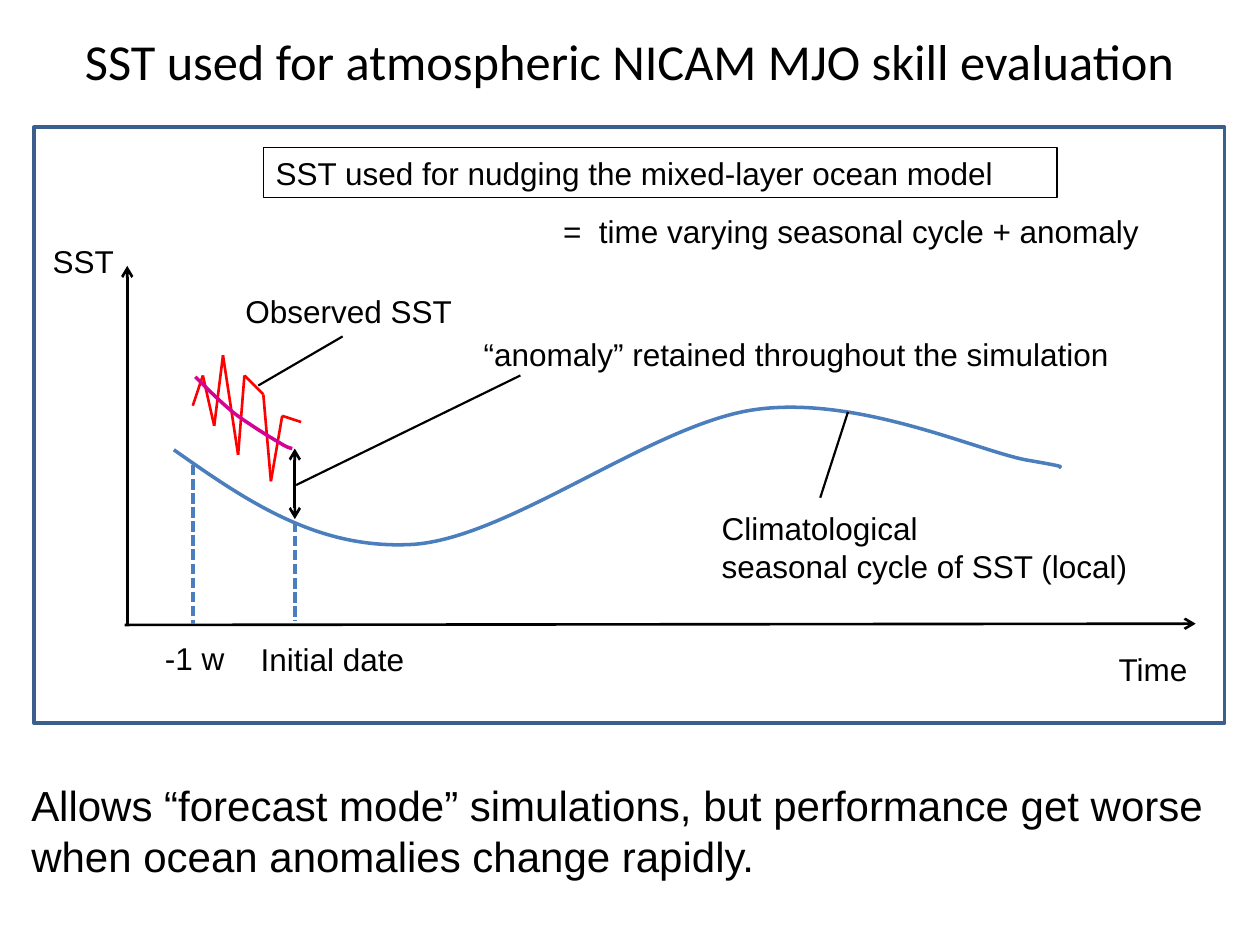
from itertools import pairwise

from lxml import etree
from pptx import Presentation
from pptx.dml.color import RGBColor
from pptx.enum import dml, shapes, text
from pptx.oxml import ns
from pptx.util import Inches, Pt

BLACK = RGBColor(0x00, 0x00, 0x00)
WHITE = RGBColor(0xFF, 0xFF, 0xFF)
FRAME_BLUE = RGBColor(0x3A, 0x5F, 0x8C)
CYCLE_BLUE = RGBColor(0x4B, 0x7E, 0xBC)
OBSERVED_RED = RGBColor(0xFF, 0x00, 0x00)
TREND_MAGENTA = RGBColor(0xD6, 0x00, 0x93)

CYCLE = [(1.11, 2.56), (1.68, 2.96), (2.25, 3.36), (3.02, 3.31),
         (3.79, 3.25), (4.92, 2.35), (5.73, 2.24),
         (6.54, 2.13), (7.47, 2.56), (7.87, 2.64),
         (8.28, 2.71), (8.1, 2.69), (8.15, 2.7)]
TREND = [(1.28, 1.98), (1.38, 2.08), (1.48, 2.18), (1.59, 2.27),
         (1.71, 2.36), (1.89, 2.47), (1.96, 2.51),
         (2.04, 2.56), (2.04, 2.54), (2.05, 2.55)]
OBSERVED = [(1.26, 2.21), (1.34, 1.97), (1.43, 2.37), (1.5, 1.81), (1.62, 2.6),
            (1.67, 1.97), (1.82, 2.12), (1.88, 2.81), (1.97, 2.29), (2.12, 2.34)]
AXES = [((0.74, 3.94), (0.74, 1.1)), ((0.72, 3.95), (9.22, 3.94))]
DATE_MARKS = [((1.26, 2.68), (1.26, 3.94)), ((2.07, 3.13), (2.07, 3.92))]
LEADERS = [((1.78, 2.05), (2.45, 1.66)), ((6.24, 2.94), (6.46, 2.26)),
           ((2.08, 2.84), (3.86, 1.97))]
LABELS = [
    (1.7, 4.02, 1.54, 0.4, ["Initial date"]),
    (0.94, 4.01, 0.8, 0.4, ["-1 w"]),
    (1.58, 1.26, 2.84, 0.4, ["Observed SST"]),
    (5.36, 2.98, 3.54, 0.71, ["Climatological", "seasonal cycle of SST (local)"]),
    (3.47, 1.6, 5.67, 0.4, ["“anomaly” retained throughout the simulation"]),
    (0.05, 0.86, 0.79, 0.4, ["SST"]),
    (8.51, 4.1, 0.79, 0.4, ["Time"]),
    (4.1, 0.62, 4.88, 0.4, ["=  time varying seasonal cycle + anomaly"]),
]


def add_text(slide, x, y, w, h, lines, size=18, font="Arial"):
    sp = slide.shapes.add_textbox(Inches(x), Inches(y), Inches(w), Inches(h))
    tf = sp.text_frame
    tf.word_wrap = True
    tf.text = "\n".join(lines)
    for p in tf.paragraphs:
        p.font.size = Pt(size)
        p.font.name = font
        p.font.color.rgb = BLACK
    return sp


def add_line(slide, x, y, start, end, color, width, arrows=(), dash=None):
    line = slide.shapes.add_connector(
        shapes.MSO_CONNECTOR.STRAIGHT,
        Inches(x + start[0]), Inches(y + start[1]),
        Inches(x + end[0]), Inches(y + end[1]))
    line.line.color.rgb = color
    line.line.width = Pt(width)
    if dash:
        line.line.dash_style = dash
    ln = line.line._get_or_add_ln()
    for tag in arrows:
        etree.SubElement(ln, ns.qn(tag), type="arrow")
    etree.SubElement(line._element.spPr, ns.qn("a:effectLst"))


def add_curve(slide, x, y, points, color):
    emu = [(Inches(x + px), Inches(y + py)) for px, py in points]
    builder = slide.shapes.build_freeform(*emu[0], scale=1.0)
    builder.add_line_segments(emu[1:], close=False)
    sp = builder.convert_to_shape()
    sp.shadow.inherit = False
    sp.fill.background()
    sp.line.color.rgb = color
    sp.line.width = Pt(2)
    segments = list(sp._element.iter(ns.qn("a:lnTo")))
    outline = segments[0].getparent()
    for i in range(0, len(segments), 3):
        bezier = etree.SubElement(outline, ns.qn("a:cubicBezTo"))
        for segment in segments[i:i + 3]:
            bezier.append(segment[0])
            outline.remove(segment)


def add_title(slide, x, y, w, h):
    sp = add_text(slide, x, y, w, h,
                  ["SST used for atmospheric NICAM MJO skill evaluation"],
                  28.8, "Calibri")
    sp.text_frame.vertical_anchor = text.MSO_ANCHOR.MIDDLE
    sp.text_frame.paragraphs[0].alignment = text.PP_ALIGN.CENTER


def add_diagram(slide, x, y, w, h):
    frame = slide.shapes.add_shape(shapes.MSO_SHAPE.RECTANGLE,
                                   Inches(x), Inches(y), Inches(w), Inches(h))
    frame.shadow.inherit = False
    frame.fill.solid()
    frame.fill.fore_color.rgb = WHITE
    frame.line.color.rgb = FRAME_BLUE
    frame.line.width = Pt(2)

    add_curve(slide, x, y, CYCLE, CYCLE_BLUE)
    add_line(slide, x, y, (2.07, 2.55), (2.07, 3.11), BLACK, 1.5,
             ("a:headEnd", "a:tailEnd"))
    for start, end in AXES:
        add_line(slide, x, y, start, end, BLACK, 1.5, ("a:tailEnd",))
    for start, end in DATE_MARKS:
        add_line(slide, x, y, start, end, CYCLE_BLUE, 2,
                 dash=dml.MSO_LINE.SQUARE_DOT)
    for start, end in pairwise(OBSERVED):
        add_line(slide, x, y, start, end, OBSERVED_RED, 1.5)
    add_curve(slide, x, y, TREND, TREND_MAGENTA)
    for start, end in LEADERS:
        add_line(slide, x, y, start, end, BLACK, 1.25)
    for dx, dy, width, height, lines in LABELS:
        add_text(slide, x + dx, y + dy, width, height, lines)

    heading = add_text(slide, x + 1.82, y + 0.16, 6.3, 0.4,
                       ["SST used for nudging the mixed-layer ocean model"])
    heading.line.color.rgb = BLACK
    heading.line.width = Pt(0.75)


def add_conclusion(slide, x, y, w, h):
    add_text(slide, x, y, w, h,
             ["Allows “forecast mode” simulations, but performance get worse "
              "when ocean anomalies change rapidly."], 24)


def main():
    prs = Presentation()
    prs.slide_width = Inches(10)
    prs.slide_height = Inches(7.5)
    s = prs.slides.add_slide(prs.slide_layouts[6])
    add_title(s, 0.5, 0.06, 9, 0.84)
    add_diagram(s, 0.27, 1.01, 9.45, 4.73)
    add_conclusion(s, 0.15, 6.14, 9.57, 1.21)
    prs.save("out.pptx")


if __name__ == "__main__":
    main()
